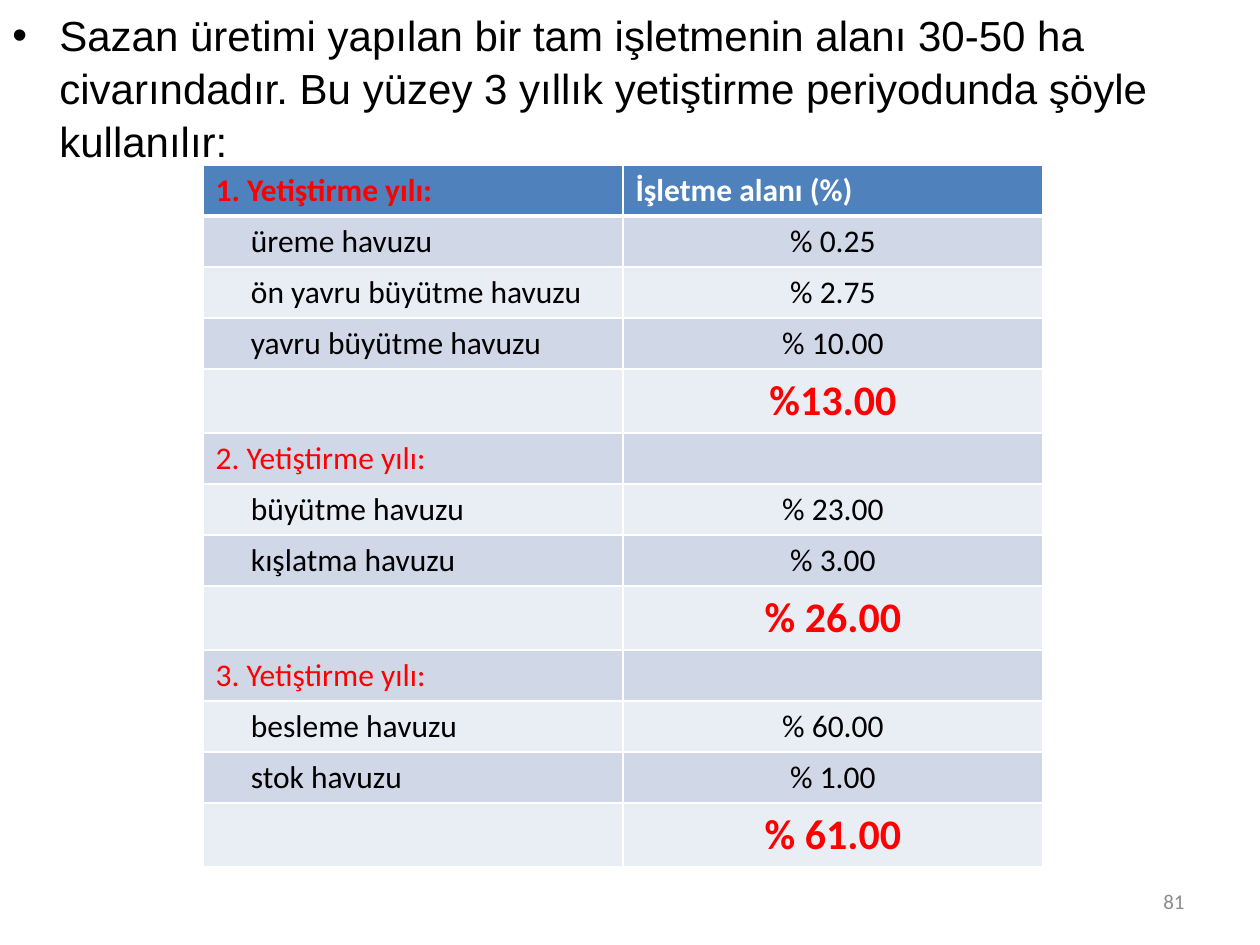
import pptx
import pptx.util
import pptx.dml.color
import pptx.enum.text
import pptx.oxml
import pptx.oxml.ns

ALIGN = pptx.enum.text.PP_ALIGN
ANCHOR = pptx.enum.text.MSO_ANCHOR
RED, BLACK, WHITE = "FF0000", "000000", "FFFFFF"
HEAD, DARK, LIGHT = "4F81BD", "D0D8E8", "E9EDF4"

ROWS = [
    ("head", "1. Yetiştirme yılı:", "İşletme alanı (%)"),
    ("item", "üreme havuzu", "% 0.25"),
    ("item", "ön yavru büyütme havuzu", "% 2.75"),
    ("item", "yavru büyütme havuzu", "% 10.00"),
    ("total", "", "%13.00"),
    ("year", "2. Yetiştirme yılı:", ""),
    ("item", "büyütme havuzu", "% 23.00"),
    ("item", "kışlatma havuzu", "% 3.00"),
    ("total", "", "% 26.00"),
    ("year", "3. Yetiştirme yılı:", ""),
    ("item", "besleme havuzu", "% 60.00"),
    ("item", "stok havuzu", "% 1.00"),
    ("total", "", "% 61.00"),
]
STYLES = {
    "head": (18, True, (RED, WHITE)),
    "item": (18, False, (BLACK, BLACK)),
    "year": (18, False, (RED, RED)),
    "total": (24, True, (RED, RED)),
}


def px(n):
    return pptx.util.Emu(round(n * 914400 / 126))


def color(code):
    return pptx.dml.color.RGBColor.from_string(code)


def style(par, face, size, tone, bold=False):
    for run in par.runs:
        run.font.name = face
        run.font.size = pptx.util.Pt(size)
        run.font.bold = bold
        run.font.color.rgb = color(tone)


def add_text(slide, box, text):
    frame = slide.shapes.add_textbox(*map(px, box)).text_frame
    frame.word_wrap = True
    frame.text = text
    return frame


def intro(slide, box):
    par = add_text(
        slide, box,
        "Sazan üretimi yapılan bir tam işletmenin alanı 30-50 ha civarındadır. "
        "Bu yüzey 3 yıllık yetiştirme periyodunda şöyle kullanılır:",
    ).paragraphs[0]
    par.line_spacing = 1.05
    props = par._p.get_or_add_pPr()
    props.set("marL", str(px(47)))
    props.set("indent", str(-px(47)))
    space = pptx.oxml.ns.nsdecls("a")
    for tag in ('buFont {} typeface="Arial"', 'buChar {} char="•"'):
        props.append(pptx.oxml.parse_xml("<a:" + tag.format(space) + "/>"))
    style(par, "Arial", 24, BLACK)


def border(cell, base):
    props = cell._tc.get_or_add_tcPr()
    edges = (("lnL", 1), ("lnR", 1), ("lnT", 1), ("lnB", base))
    for spot, (tag, width) in enumerate(edges):
        line = pptx.oxml.parse_xml(
            f'<a:{tag} {pptx.oxml.ns.nsdecls("a")} w="{pptx.util.Pt(width)}">'
            f'<a:solidFill><a:srgbClr val="{WHITE}"/></a:solidFill></a:{tag}>'
        )
        props.insert(spot, line)


def areas(slide, box):
    table = slide.shapes.add_table(len(ROWS), 2, *map(px, box)).table
    for r, (kind, *texts) in enumerate(ROWS):
        size, bold, tones = STYLES[kind]
        table.rows[r].height = px(64 if kind == "total" else 51)
        fill = HEAD if r == 0 else DARK if r % 2 else LIGHT
        for c, text in enumerate(texts):
            cell = table.cell(r, c)
            cell.fill.solid()
            cell.fill.fore_color.rgb = color(fill)
            border(cell, 3 if r == 0 else 1)
            cell.text_frame.text = text
            par = cell.text_frame.paragraphs[0]
            if c == 1 and r > 0:
                par.alignment = ALIGN.CENTER
            if kind == "item" and c == 0:
                cell.margin_left = px(48)
            style(par, "Calibri", size, tones[c], bold)


def number(slide, box):
    frame = add_text(slide, box, "81")
    frame.vertical_anchor = ANCHOR.MIDDLE
    frame.paragraphs[0].alignment = ALIGN.RIGHT
    style(frame.paragraphs[0], "Calibri", 12, "8C8C8C")


def main():
    deck = pptx.Presentation()
    deck.slide_width, deck.slide_height = px(1260), px(945)
    slide = deck.slides.add_slide(deck.slide_layouts[6])
    intro(slide, (0, 1, 1260, 175))
    number(slide, (903, 876, 294, 50))
    areas(slide, (203, 165, 840, 702))
    deck.save("out.pptx")


if __name__ == "__main__":
    main()
